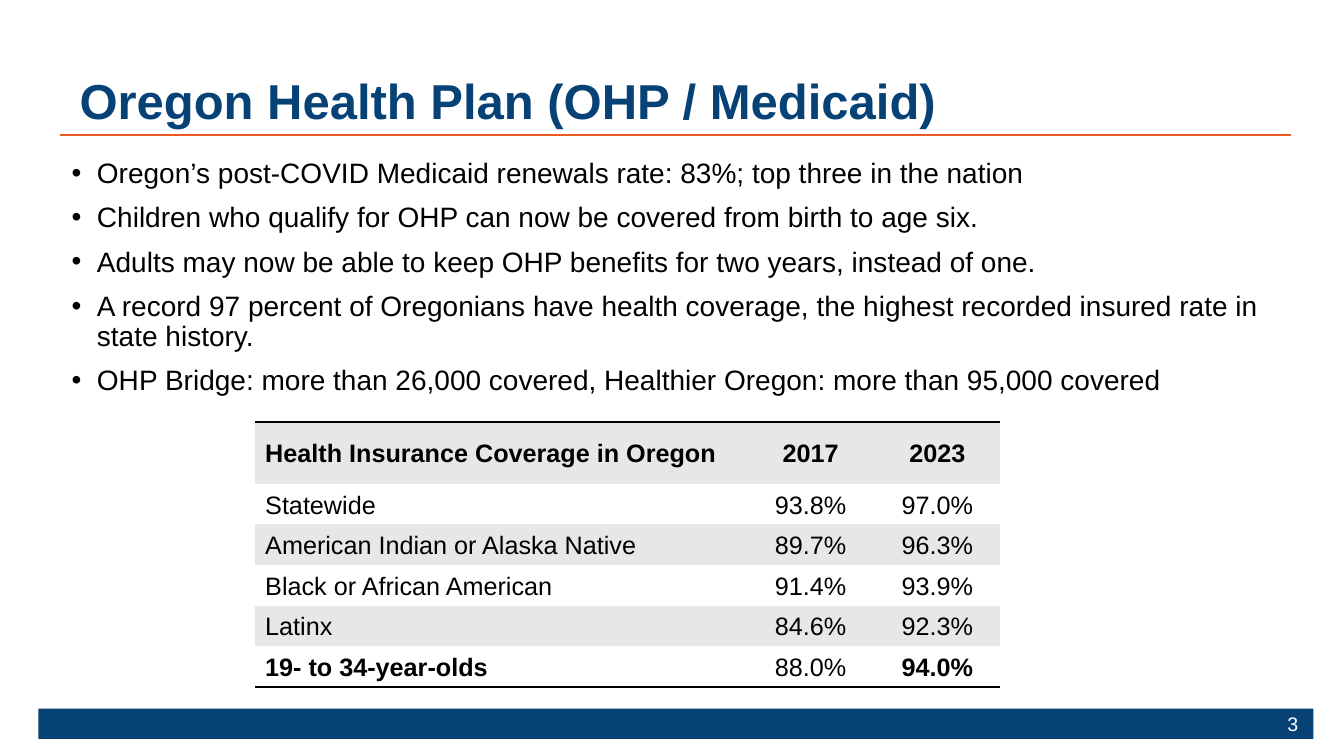
from dataclasses import dataclass

from lxml import etree
from pptx import Presentation
from pptx.dml.color import RGBColor
from pptx.enum.shapes import MSO_CONNECTOR, MSO_SHAPE
from pptx.enum.text import MSO_ANCHOR, MSO_AUTO_SIZE, PP_ALIGN
from pptx.oxml.ns import qn
from pptx.util import Cm, Pt

LEFT, CENTER, RIGHT = PP_ALIGN.LEFT, PP_ALIGN.CENTER, PP_ALIGN.RIGHT
TOP, MIDDLE, BOTTOM = MSO_ANCHOR.TOP, MSO_ANCHOR.MIDDLE, MSO_ANCHOR.BOTTOM
RECTANGLE, STRAIGHT = MSO_SHAPE.RECTANGLE, MSO_CONNECTOR.STRAIGHT
NO_AUTOFIT = MSO_AUTO_SIZE.NONE

NAVY = RGBColor(0x06, 0x42, 0x76)
ORANGE = RGBColor(0xEC, 0x5A, 0x24)
GREY = RGBColor(0xE7, 0xE7, 0xE7)
WHITE = RGBColor(0xFF, 0xFF, 0xFF)
BLACK = RGBColor(0x00, 0x00, 0x00)

FONT = "Arial"
PLAIN_TABLE_STYLE = "{2D5ABB26-0587-4C30-8999-92F81FD0307C}"
COLUMN_WIDTHS = (Cm(12.4), Cm(3.2), Cm(3.18))
HEADER_HEIGHT, ROW_HEIGHT = Cm(1.55), Cm(1.02)


@dataclass(frozen=True)
class CoverageRow:
    texts: tuple[str, str, str]
    bold: tuple[bool, bool, bool] = (False, False, False)


BULLETS = (
    "Oregon’s post-COVID Medicaid renewals rate: 83%; top three in the nation",
    "Children who qualify for OHP can now be covered from birth to age six.",
    "Adults may now be able to keep OHP benefits for two years, instead of one.",
    "A record 97 percent of Oregonians have health coverage, the highest recorded "
    "insured rate in state history.",
    "OHP Bridge: more than 26,000 covered, Healthier Oregon: more than 95,000 covered",
)

COVERAGE = (
    CoverageRow(("Health Insurance Coverage in Oregon", "2017", "2023"), (True, True, True)),
    CoverageRow(("Statewide", "93.8%", "97.0%")),
    CoverageRow(("American Indian or Alaska Native", "89.7%", "96.3%")),
    CoverageRow(("Black or African American", "91.4%", "93.9%")),
    CoverageRow(("Latinx", "84.6%", "92.3%")),
    CoverageRow(("19- to 34-year-olds", "88.0%", "94.0%"), (True, False, True)),
)


def write(paragraph, text: str, *, size: float, color: RGBColor = BLACK, bold: bool = False,
          align: PP_ALIGN = LEFT, line_spacing=None, space_before: float = 0) -> None:
    paragraph.alignment = align
    paragraph.line_spacing = line_spacing
    paragraph.space_before = Pt(space_before)
    span = paragraph.add_run()
    span.text = text
    span.font.name = FONT
    span.font.size = Pt(size)
    span.font.bold = bold
    span.font.color.rgb = color


def place(box, left: float, top: float, width: float, height: float, anchor: MSO_ANCHOR):
    """Move a text shape, given in centimetres, and return its text frame."""
    box.left, box.top, box.width, box.height = Cm(left), Cm(top), Cm(width), Cm(height)
    frame = box.text_frame
    frame.word_wrap = True
    frame.auto_size = NO_AUTOFIT
    frame.vertical_anchor = anchor
    return frame


def add_bullet(paragraph) -> None:
    properties = paragraph._p.get_or_add_pPr()
    properties.set("marL", str(Cm(0.64)))
    properties.set("indent", str(-Cm(0.64)))
    etree.SubElement(properties, qn("a:buFont"), typeface=FONT)
    etree.SubElement(properties, qn("a:buChar"), char="•")


def add_border(cell, side: str) -> None:
    """Draw a black 2 pt rule on the side named by an a:tcPr child tag."""
    border = etree.Element(qn(side), w=str(Pt(2)))
    fill = etree.SubElement(border, qn("a:solidFill"))
    etree.SubElement(fill, qn("a:srgbClr"), val=str(BLACK))
    cell._tc.get_or_add_tcPr().insert(0, border)


def add_frame_lines(page) -> None:
    """Add the rule under the title and the bar at the foot."""
    bar = page.shapes.add_shape(RECTANGLE, Cm(0.97), Cm(17.86), Cm(32.13), Cm(0.76))
    bar.shadow.inherit = False
    bar.fill.solid()
    bar.fill.fore_color.rgb = NAVY
    bar.line.fill.background()

    rule = page.shapes.add_connector(STRAIGHT, Cm(1.5), Cm(3.4), Cm(32.54), Cm(3.4))
    rule.line.color.rgb = ORANGE
    rule.line.width = Pt(1)
    etree.SubElement(rule._element.spPr, qn("a:effectLst"))


def add_coverage_table(page) -> None:
    last = len(COVERAGE) - 1
    graphic = page.shapes.add_table(len(COVERAGE), len(COLUMN_WIDTHS), Cm(6.43), Cm(10.64),
                                    sum(COLUMN_WIDTHS), HEADER_HEIGHT + last * ROW_HEIGHT)
    table = graphic.table
    table._tbl.tblPr.find(qn("a:tableStyleId")).text = PLAIN_TABLE_STYLE
    for column, width in zip(table.columns, COLUMN_WIDTHS):
        column.width = width
    for index, row in enumerate(COVERAGE):
        table.rows[index].height = ROW_HEIGHT if index else HEADER_HEIGHT
        for position, (text, bold) in enumerate(zip(row.texts, row.bold)):
            cell = table.cell(index, position)
            cell.vertical_anchor = MIDDLE
            cell.fill.solid()
            cell.fill.fore_color.rgb = WHITE if index % 2 else GREY
            write(cell.text_frame.paragraphs[0], text, size=18, bold=bold,
                  align=CENTER if position else LEFT, line_spacing=Pt(21.8))
            if index == 0:
                add_border(cell, "a:lnT")
            elif index == last:
                add_border(cell, "a:lnB")


def main() -> None:
    deck = Presentation()
    deck.slide_width, deck.slide_height = Cm(33.87), Cm(19.05)
    page = deck.slides.add_slide(deck.slide_layouts[1])
    add_frame_lines(page)

    title = place(page.shapes.title, 1.75, 1.12, 27.8, 2.28, BOTTOM)
    write(title.paragraphs[0], "Oregon Health Plan (OHP / Medicaid)",
          size=35, color=NAVY, bold=True, line_spacing=0.9)

    body = place(page.placeholders[1], 1.55, 3.89, 31.45, 6.6, TOP)
    for index, text in enumerate(BULLETS):
        paragraph = body.add_paragraph() if index else body.paragraphs[0]
        add_bullet(paragraph)
        write(paragraph, text, size=20, line_spacing=0.9, space_before=10 if index else 0)

    number_box = page.shapes.add_textbox(0, 0, 0, 0)
    number = place(number_box, 26.64, 17.98, 6.33, 0.51, MIDDLE)
    write(number.paragraphs[0], "3", size=14, color=WHITE, align=RIGHT)

    add_coverage_table(page)
    deck.save("out.pptx")


if __name__ == "__main__":
    main()
